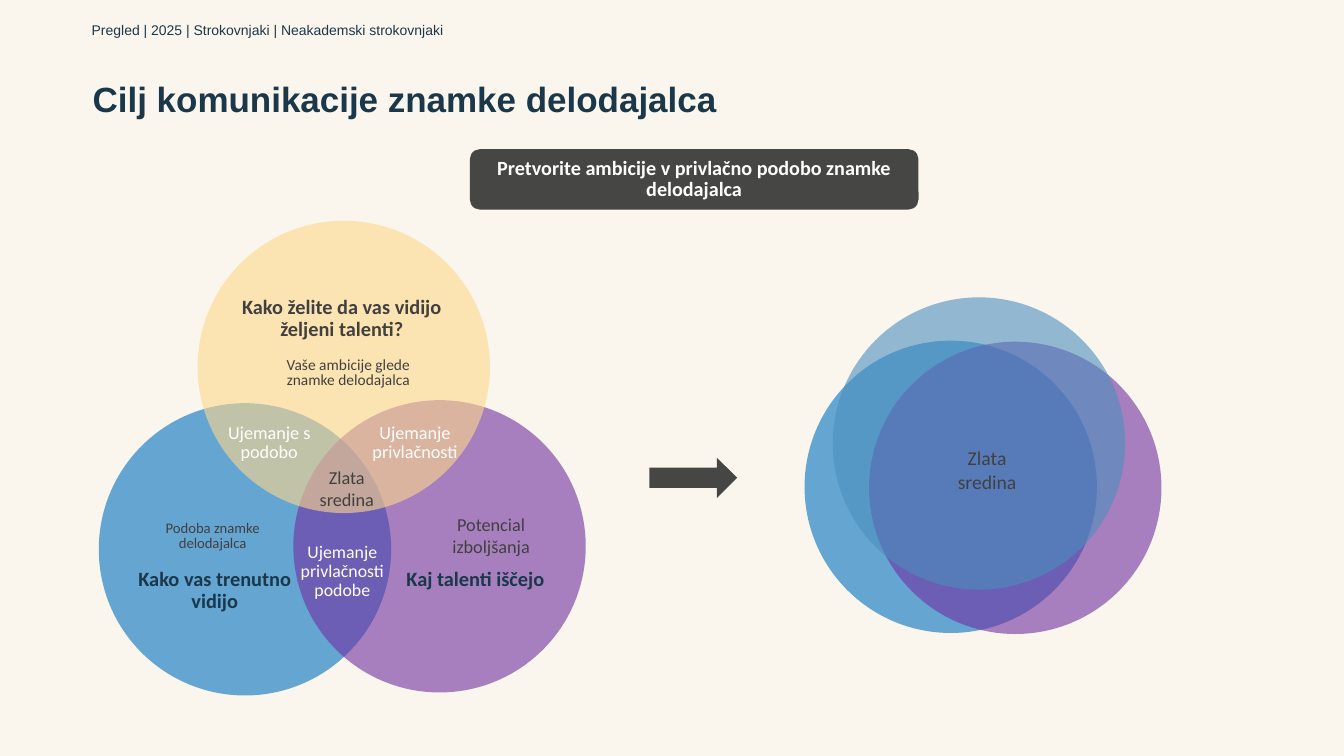
from dataclasses import dataclass
from typing import NamedTuple

from lxml.etree import SubElement
from pptx import Presentation
from pptx.dml.color import RGBColor
from pptx.enum.shapes import MSO_SHAPE
from pptx.enum.text import MSO_ANCHOR, PP_ALIGN
from pptx.oxml.ns import qn
from pptx.shapes.autoshape import Shape
from pptx.slide import Slide
from pptx.util import Emu, Pt

EMU_PER_PX = 9144
CIRCLE_SIZE = 290


@dataclass(frozen=True)
class Theme:
    background: str = "FAF6ED"
    navy: str = "1B374A"
    ink: str = "414041"
    white: str = "FFFFFF"
    charcoal: str = "333333"
    blue: str = "0070C0"
    purple: str = "7030A0"
    steel: str = "4B8FBD"
    yellow: str = "FED88C"
    heading_font: str = "Arial"
    body_font: str = "Calibri"
    title_size: float = 25
    breadcrumb_size: float = 10
    banner_size: float = 14.4
    question_size: float = 14.5
    goal_size: float = 14
    overlap_size: float = 13
    core_overlap_size: float = 12.7
    ambition_size: float = 11
    image_size: float = 10.5


THEME = Theme()


class Box(NamedTuple):
    left: int
    top: int
    width: int
    height: int


class Circle(NamedTuple):
    left: int
    top: int
    color: str


@dataclass(frozen=True)
class Label:
    box: Box
    text: str
    size: float
    color: str = THEME.ink
    bold: bool = False
    font: str = THEME.body_font
    align: PP_ALIGN = PP_ALIGN.CENTER
    anchor: MSO_ANCHOR = MSO_ANCHOR.MIDDLE
    line_spacing: float = 1.0
    space_after: float = 0
    margins: tuple[int, int, int, int] = (10, 5, 10, 5)


def px(length: int) -> Emu:
    return Emu(length * EMU_PER_PX)


def question(box: Box, text: str, color: str) -> Label:
    return Label(box, text, THEME.question_size, color, True,
                 anchor=MSO_ANCHOR.TOP, line_spacing=0.9, space_after=5.4)


def overlap(box: Box, text: str, size: float = THEME.overlap_size,
            anchor: MSO_ANCHOR = MSO_ANCHOR.TOP) -> Label:
    return Label(box, text, size, THEME.white, anchor=anchor,
                 line_spacing=0.9, space_after=5.4)


HEADINGS = [
    Label(Box(92, 61, 1150, 79), "Cilj komunikacije znamke delodajalca",
          THEME.title_size, THEME.navy, True, THEME.heading_font,
          PP_ALIGN.LEFT, line_spacing=0.9, margins=(0, 0, 0, 0)),
    Label(Box(0, 0, 1333, 61),
          "Pregled | 2025 | Strokovnjaki | Neakademski strokovnjaki",
          THEME.breadcrumb_size, THEME.navy, False, THEME.heading_font,
          PP_ALIGN.LEFT, line_spacing=0.9, margins=(91, 0, 0, 0)),
]
CIRCLES = [
    Circle(798, 338, THEME.blue),
    Circle(862, 339, THEME.purple),
    Circle(826, 295, THEME.steel),
    Circle(98, 400, THEME.blue),
    Circle(291, 397, THEME.purple),
    Circle(196, 219, THEME.yellow),
]
BANNER = Label(Box(466, 148, 445, 60),
               "Pretvorite ambicije v privlačno podobo znamke delodajalca",
               THEME.banner_size, THEME.white, True, line_spacing=0.9)
ARROW_BOX = Box(644, 454, 87, 40)
DIAGRAM_LABELS = [
    Label(Box(935, 446, 88, 40), "Zlata sredina", THEME.goal_size),
    question(Box(377, 560, 189, 32), "Kaj talenti iščejo", THEME.navy),
    question(Box(115, 560, 196, 54), "Kako vas trenutno vidijo", THEME.navy),
    question(Box(222, 290, 234, 54),
             "Kako želite da vas vidijo željeni talenti?", THEME.ink),
    overlap(Box(214, 415, 106, 49), "Ujemanje s podobo"),
    overlap(Box(352, 415, 119, 49), "Ujemanje privlačnosti"),
    Label(Box(301, 464, 86, 40), "Zlata sredina", THEME.overlap_size),
    overlap(Box(285, 525, 109, 84), "Ujemanje privlačnosti podobe",
            THEME.core_overlap_size, MSO_ANCHOR.MIDDLE),
    Label(Box(271, 351, 149, 40), "Vaše ambicije glede znamke delodajalca",
          THEME.ambition_size, line_spacing=0.8),
    Label(Box(153, 505, 116, 55), "Podoba znamke delodajalca",
          THEME.image_size, line_spacing=0.8),
    Label(Box(406, 501, 162, 60), "Potencial izboljšanja",
          THEME.overlap_size),
]


def write_text(shape: Shape, label: Label) -> None:
    frame = shape.text_frame
    frame.word_wrap = True
    frame.vertical_anchor = label.anchor
    (frame.margin_left, frame.margin_top,
     frame.margin_right, frame.margin_bottom) = map(px, label.margins)
    paragraph = frame.paragraphs[0]
    paragraph.text = label.text
    paragraph.alignment = label.align
    paragraph.line_spacing = label.line_spacing
    paragraph.space_after = Pt(label.space_after)
    paragraph.font.name = label.font
    paragraph.font.size = Pt(label.size)
    paragraph.font.bold = label.bold
    paragraph.font.color.rgb = RGBColor.from_string(label.color)


def add_label(slide: Slide, label: Label) -> None:
    write_text(slide.shapes.add_textbox(*map(px, label.box)), label)


def add_filled_shape(slide: Slide, kind: MSO_SHAPE, box: Box, color: str,
                     opacity: int) -> Shape:
    shape = slide.shapes.add_shape(kind, *map(px, box))
    shape.shadow.inherit = False
    shape.line.fill.background()
    shape.fill.solid()
    shape.fill.fore_color.rgb = RGBColor.from_string(color)
    fill_color = shape.element.spPr.find(f"{qn('a:solidFill')}/{qn('a:srgbClr')}")
    SubElement(fill_color, qn("a:alpha"), val=str(opacity * 1000))
    return shape


def main() -> None:
    presentation = Presentation()
    presentation.slide_width = px(1333)
    presentation.slide_height = px(750)
    slide = presentation.slides.add_slide(presentation.slide_layouts[6])
    slide.background.fill.solid()
    slide.background.fill.fore_color.rgb = RGBColor.from_string(THEME.background)

    for heading in HEADINGS:
        add_label(slide, heading)
    for circle in CIRCLES:
        box = Box(circle.left, circle.top, CIRCLE_SIZE, CIRCLE_SIZE)
        add_filled_shape(slide, MSO_SHAPE.FLOWCHART_CONNECTOR, box, circle.color, 60)
    banner = add_filled_shape(slide, MSO_SHAPE.ROUNDED_RECTANGLE, BANNER.box,
                              THEME.charcoal, 90)
    write_text(banner, BANNER)
    add_filled_shape(slide, MSO_SHAPE.RIGHT_ARROW, ARROW_BOX, THEME.charcoal, 90)
    for label in DIAGRAM_LABELS:
        add_label(slide, label)

    presentation.save("out.pptx")


if __name__ == "__main__":
    main()
